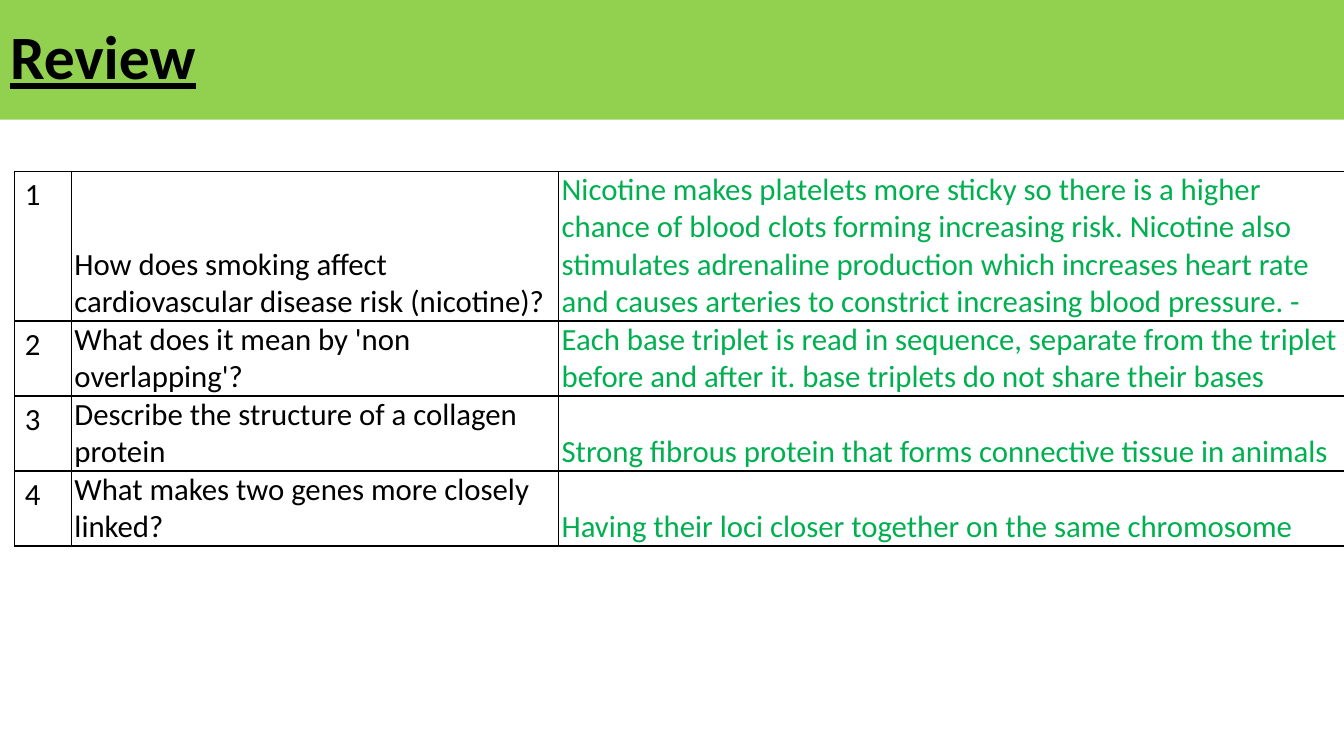
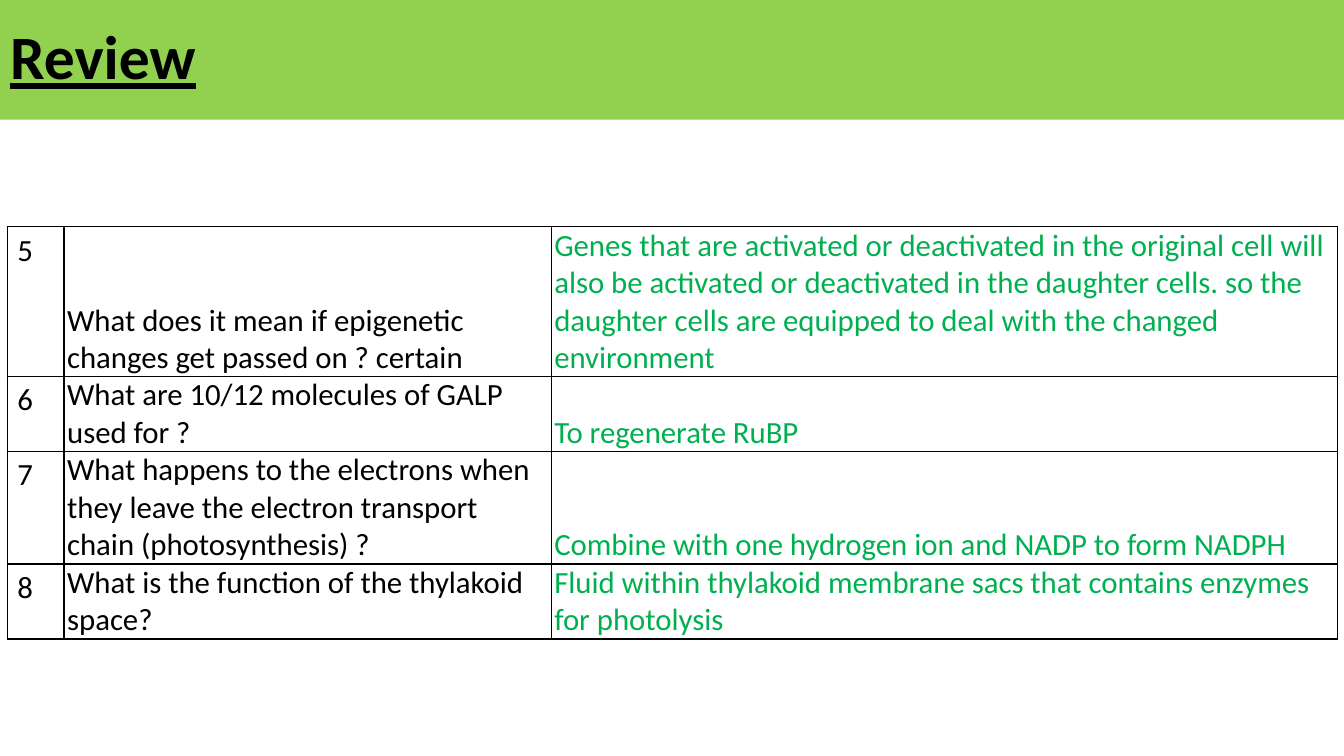
from lxml.etree import SubElement
from pptx import Presentation
from pptx.dml.color import RGBColor
from pptx.enum.text import MSO_ANCHOR, MSO_AUTO_SIZE, PP_ALIGN
from pptx.oxml.ns import qn
from pptx.util import Emu, Pt

FONT = "Calibri"
BLACK, BAND, ANSWER = "000000", "92D050", "00B050"
SLIDE_W, SLIDE_H, BAND_H = 1280, 720, 114
COLUMNS = (54, 464, 749)
ROW_H, CELL_INSET = 43, 3

SLIDES = [
    (14, 163, [
        ("1", "How does smoking affect cardiovascular disease risk (nicotine)?",
         "Nicotine makes platelets more sticky so there is a higher chance of blood clots "
         "forming increasing risk. Nicotine also stimulates adrenaline production which "
         "increases heart rate and causes arteries to constrict increasing blood pressure. -"),
        ("2", "What does it mean by 'non overlapping'?",
         "Each base triplet is read in sequence, separate from the triplet before and after "
         "it. base triplets do not share their bases"),
        ("3", "Describe the structure of a collagen protein",
         "Strong fibrous protein that forms connective tissue in animals"),
        ("4", "What makes two genes more closely linked?",
         "Having their loci closer together on the same chromosome"),
    ]),
    (7, 216, [
        ("5", "What does it mean if epigenetic changes get passed on ? certain",
         "Genes that are activated or deactivated in the original cell will also be activated "
         "or deactivated in the daughter cells. so the daughter cells are equipped to deal "
         "with the changed environment"),
        ("6", "What are 10/12 molecules of GALP used for ?",
         "To regenerate RuBP"),
        ("7", "What happens to the electrons when they leave the electron transport chain "
         "(photosynthesis) ?",
         "Combine with one hydrogen ion and NADP to form NADPH"),
        ("8", "What is the function of the thylakoid space?",
         "Fluid within thylakoid membrane sacs that contains enzymes for photolysis"),
    ]),
]


def px(n):
    return Emu(n * 9525)


def rgb(value):
    return RGBColor.from_string(value)


def write(tf, text, size=22, color=BLACK, bold=False, underline=False, spacing=None):
    p = tf.paragraphs[0]
    p.alignment = PP_ALIGN.LEFT
    p.line_spacing = spacing
    r = p.add_run()
    r.text = text
    r.font.name = FONT
    r.font.size = Pt(size)
    r.font.bold = bold
    r.font.underline = underline
    r.font.color.rgb = rgb(color)


def add_title(s, text):
    sp = s.shapes.title
    sp.left, sp.top, sp.width, sp.height = px(0), px(0), px(SLIDE_W), px(BAND_H)
    sp.fill.solid()
    sp.fill.fore_color.rgb = rgb(BAND)
    tf = sp.text_frame
    tf.auto_size = MSO_AUTO_SIZE.NONE
    tf.vertical_anchor = MSO_ANCHOR.MIDDLE
    write(tf, text, size=44, bold=True, underline=True, spacing=0.9)


def add_borders(cell, color=BLACK, width=1):
    tcPr = cell._tc.get_or_add_tcPr()
    for i, side in enumerate(("lnL", "lnR", "lnT", "lnB")):
        ln = SubElement(tcPr, qn(f"a:{side}"), w=str(Pt(width)))
        fill = SubElement(ln, qn("a:solidFill"))
        SubElement(fill, qn("a:srgbClr"), val=color)
        tcPr.insert(i, ln)


def add_review_table(s, left, top, rows):
    table = s.shapes.add_table(len(rows), len(COLUMNS), px(left), px(top),
                               px(sum(COLUMNS)), px(ROW_H * len(rows))).table
    table.first_row = table.horz_banding = False
    for column, width in zip(table.columns, COLUMNS):
        column.width = px(width)
    for i, row in enumerate(rows):
        for j, text in enumerate(row):
            cell = table.cell(i, j)
            cell.fill.background()
            add_borders(cell)
            if j > 0:
                cell.vertical_anchor = MSO_ANCHOR.BOTTOM
                cell.margin_left = cell.margin_right = px(CELL_INSET)
                cell.margin_top = cell.margin_bottom = px(0)
            write(cell.text_frame, text, color=ANSWER if j == 2 else BLACK)


def main():
    prs = Presentation()
    prs.slide_width, prs.slide_height = px(SLIDE_W), px(SLIDE_H)
    for left, top, rows in SLIDES:
        s = prs.slides.add_slide(prs.slide_layouts[5])
        add_title(s, "Review")
        add_review_table(s, left, top, rows)
    prs.save("out.pptx")


if __name__ == "__main__":
    main()
